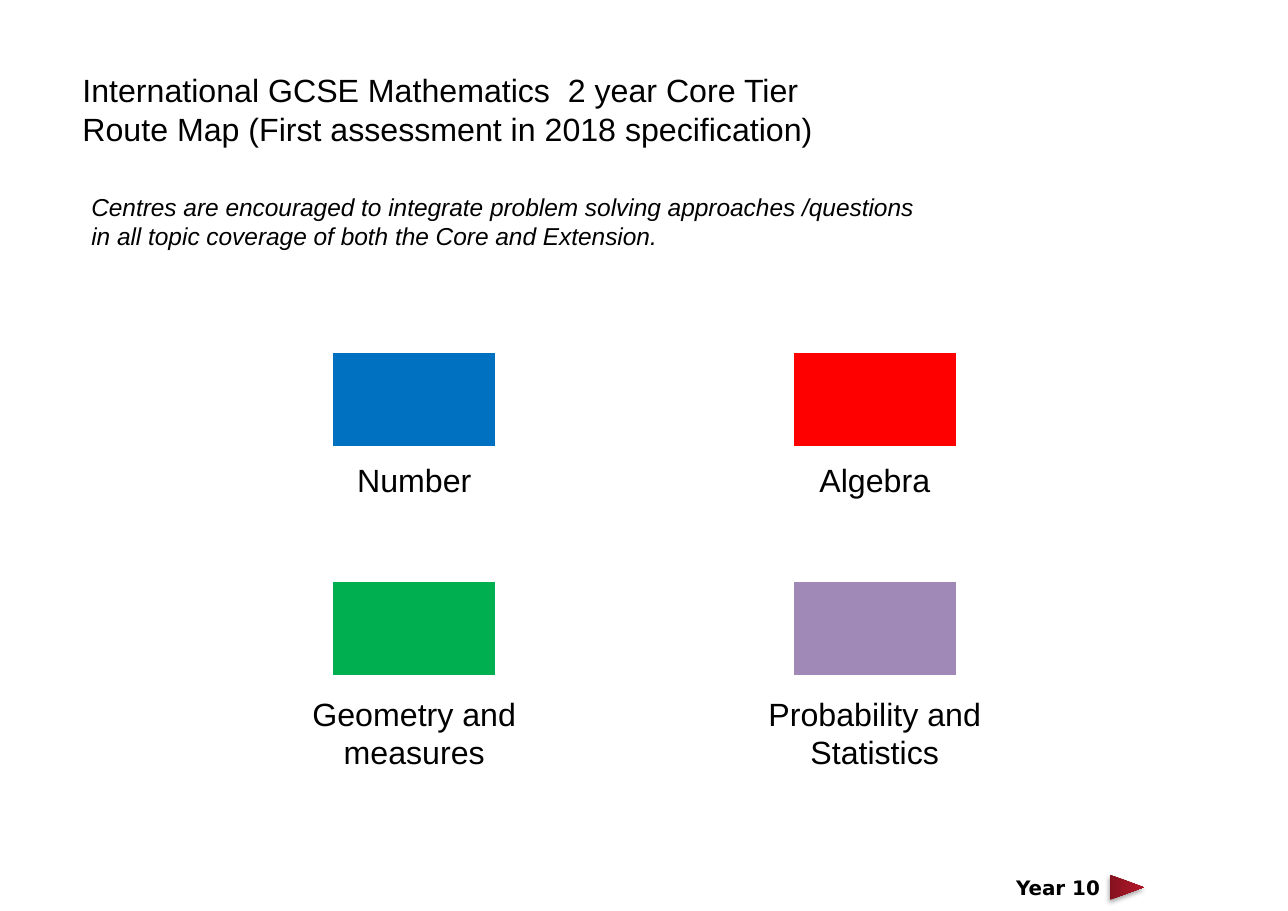
from pptx import Presentation
from pptx.dml.color import RGBColor
from pptx.enum.shapes import MSO_SHAPE
from pptx.enum.text import MSO_ANCHOR, PP_ALIGN
from pptx.oxml import parse_xml
from pptx.oxml.ns import nsdecls
from pptx.util import Inches, Pt

# Topic: name, colour, label width, label height
TOPICS = [
    [("Number", "0070C0", 1.5, 0.45), ("Algebra", "FF0000", 1.5, 0.45)],
    [("Geometry and measures", "00B050", 2.2, 0.81),
     ("Probability and Statistics", "A088B7", 2.16, 0.81)],
]
LEFTS = (3.01, 7.19)
TOPS = (3.19, 5.27)
LABELS = (4.13, 6.25)
WIDE, HIGH = 1.5, 0.87


def color(code):
    return RGBColor.from_string(code)


def add_text(slide, text, box, size, align=PP_ALIGN.LEFT, face="Arial",
             bold=False, italic=False):
    frame = slide.shapes.add_textbox(*map(Inches, box)).text_frame
    frame.word_wrap = True
    frame.vertical_anchor = MSO_ANCHOR.TOP
    para = frame.paragraphs[0]
    para.alignment = align
    run = para.add_run()
    run.text = text
    font = run.font
    font.name, font.size = face, Pt(size)
    font.bold, font.italic = bold, italic
    font.color.rgb = color("000000")


def add_swatch(slide, left, top, fill):
    shape = slide.shapes.add_shape(
        MSO_SHAPE.RECTANGLE, *map(Inches, (left, top, WIDE, HIGH)))
    shape.shadow.inherit = False
    shape.fill.solid()
    shape.fill.fore_color.rgb = color(fill)
    shape.line.color.rgb = color("FFFFFF")
    shape.line.width = Pt(2)


def add_arrow(slide, box, stops):
    shape = slide.shapes.add_shape(
        MSO_SHAPE.ISOSCELES_TRIANGLE, *map(Inches, box))
    shape.rotation = 90
    shape.line.fill.background()
    shape.shadow.inherit = False
    # Gradient from base to tip
    shape.fill.gradient()
    shape.fill.gradient_angle = 90
    props = shape.element.spPr
    marks = "".join(
        f'<a:gs pos="{pos * 1000}"><a:srgbClr val="{code}"/></a:gs>'
        for pos, code in stops)
    old = props.find(".//{*}gsLst")
    old.getparent().replace(
        old, parse_xml(f'<a:gsLst {nsdecls("a")}>{marks}</a:gsLst>'))
    # Soft shadow below
    props.find("{*}effectLst").append(parse_xml(
        f'<a:outerShdw {nsdecls("a")} blurRad="{Pt(3.1)}" dist="{Pt(1.8)}" '
        'dir="5400000" rotWithShape="0"><a:srgbClr val="000000">'
        '<a:alpha val="35000"/></a:srgbClr></a:outerShdw>'))


def main():
    deck = Presentation()
    deck.slide_width, deck.slide_height = Inches(11.69), Inches(8.27)
    slide = deck.slides.add_slide(deck.slide_layouts[6])

    # Heading and advice
    add_text(slide, "International GCSE Mathematics  2 year Core Tier "
             "Route Map (First assessment in 2018 specification)",
             (0.65, 0.59, 7.4, 0.81), 21)
    add_text(slide, "Centres are encouraged to integrate problem solving "
             "approaches /questions in all topic coverage of both the Core "
             "and Extension.", (0.73, 1.69, 7.72, 0.64), 16, italic=True)

    # Colour key, each label centred under its swatch
    for row, top, below in zip(TOPICS, TOPS, LABELS):
        for (name, fill, width, height), left in zip(row, LEFTS):
            add_swatch(slide, left, top, fill)
            start = left + (WIDE - width) / 2
            add_text(slide, name, (start, below, width, height), 21,
                     PP_ALIGN.CENTER)

    # Pointer to the next page
    add_text(slide, "Year 10", (9.03, 7.9, 1.05, 0.32), 13, PP_ALIGN.RIGHT,
             "DejaVu Sans", bold=True)
    add_arrow(slide, (10.11, 7.9, 0.23, 0.31),
              [(0, "84111E"), (80, "AB1727"), (100, "AF1425")])

    deck.save("out.pptx")


if __name__ == "__main__":
    main()
